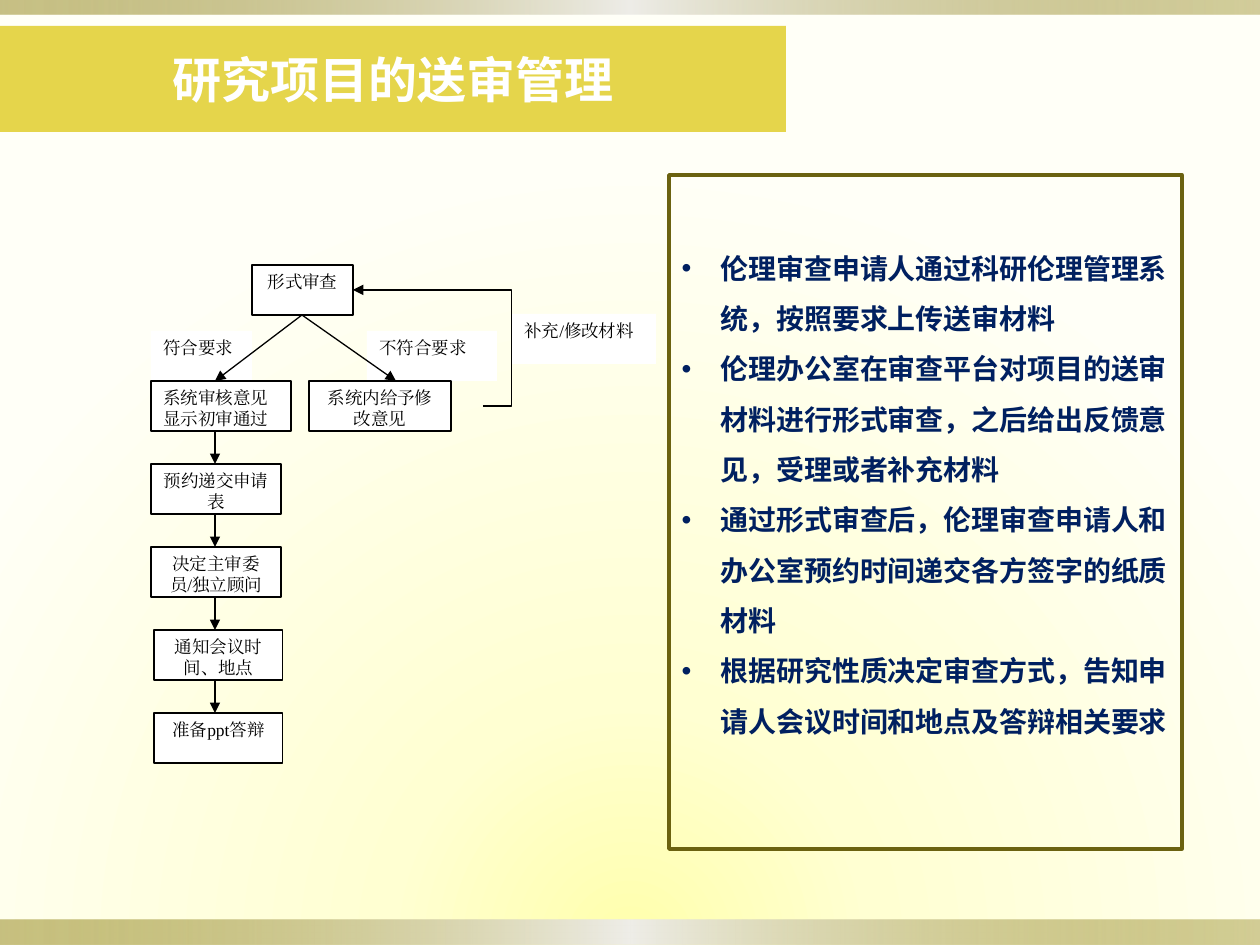
from lxml.etree import SubElement
from pptx import Presentation
from pptx.dml.color import RGBColor
from pptx.enum.shapes import MSO_CONNECTOR as CONN, MSO_SHAPE as SHAPE
from pptx.enum.text import MSO_ANCHOR as ANCHOR, MSO_AUTO_SIZE as AUTO, PP_ALIGN as ALIGN
from pptx.oxml import parse_xml
from pptx.oxml.ns import nsdecls, qn
from pptx.util import Emu, Pt

SCALE = 914400 / 126
WHITE = RGBColor(0xFF, 0xFF, 0xFF)
BLACK = RGBColor(0, 0, 0)
YELLOW = RGBColor(0xE5, 0xD5, 0x4B)
OLIVE = RGBColor(0x6B, 0x62, 0x10)
NAVY = RGBColor(0x00, 0x20, 0x60)
BAND = RGBColor(0x91, 0x84, 0x15)
SILVER = RGBColor(0xEE, 0xED, 0xE8)
GLOW = RGBColor(0xFF, 0xFF, 0xAC)
CREAM = RGBColor(0xFF, 0xFF, 0xD2)
IVORY = RGBColor(0xFF, 0xFF, 0xF7)
HEAD_FONT, FLOW_FONT = "Cabin", "Times New Roman"

TITLE = "研究项目的送审管理"
POINTS = [
    "伦理审查申请人通过科研伦理管理系统，按照要求上传送审材料",
    "伦理办公室在审查平台对项目的送审材料进行形式审查，之后给出反馈意见，受理或者补充材料",
    "通过形式审查后，伦理审查申请人和办公室预约时间递交各方签字的纸质材料",
    "根据研究性质决定审查方式，告知申请人会议时间和地点及答辩相关要求",
]
LABELS = [
    ("补充/修改材料", 361, 49, 144),
    ("不符合要求", 216, 66, 130),
    ("符合要求", 0, 66, 101),
]
STEPS = [
    ("预约递交申请表", 0, 130),
    ("决定主审委员/独立顾问", 0, 130),
    ("通知会议时间、地点", 3, 129),
    ("准备ppt答辩", 3, 129),
]
BOX_H, STEP, ROW_Y, ARROW_X = 50, 83, 116, 64


def px(n):
    return Emu(round(n * SCALE))


def place(sp, x, y, w, h):
    sp.left, sp.top, sp.width, sp.height = map(px, (x, y, w, h))


def set_gradient(fill, owner, stops, direction):
    fill.gradient()
    old = owner.find(".//" + qn("a:gradFill"))
    gs = "".join(
        f'<a:gs pos="{pos * 1000}"><a:srgbClr val="{color}">'
        f'<a:alpha val="{alpha * 1000}"/></a:srgbClr></a:gs>'
        for pos, color, alpha in stops)
    old.getparent().replace(old, parse_xml(
        f'<a:gradFill {nsdecls("a")} rotWithShape="1"><a:gsLst>{gs}</a:gsLst>{direction}</a:gradFill>'))


def add_run(p, text, size, font, color, bold=False):
    r = p.add_run()
    r.text = text
    f = r.font
    f.size, f.name, f.bold = Pt(size), font, bold
    f.color.rgb = color
    SubElement(r._r.get_or_add_rPr(), qn("a:ea")).set("typeface", font)


def add_rect(s, x, y, w, h):
    sp = s.shapes.add_shape(SHAPE.RECTANGLE, *map(px, (x, y, w, h)))
    sp.shadow.inherit = False
    sp.line.fill.background()
    return sp


def add_background(s):
    set_gradient(
        s.background.fill, s._element,
        [(0, GLOW, 100), (31, CREAM, 100), (100, IVORY, 100)],
        '<a:path path="circle"><a:fillToRect l="50000" t="150000" r="50000"/></a:path>')


def add_band(s, x, y, w, h):
    sp = add_rect(s, x, y, w, h)
    set_gradient(sp.fill, sp._element, [(0, BAND, 50), (50, SILVER, 100), (100, BAND, 40)],
                 '<a:lin ang="0" scaled="0"/>')


def add_title(s, x, y, w, h):
    sp = s.shapes.title
    place(sp, x, y, w, h)
    sp.fill.solid()
    sp.fill.fore_color.rgb = YELLOW
    tf = sp.text_frame
    tf.auto_size, tf.vertical_anchor = AUTO.NONE, ANCHOR.MIDDLE
    p = tf.paragraphs[0]
    p.alignment = ALIGN.CENTER
    add_run(p, TITLE, 28, HEAD_FONT, WHITE, True)


def add_points(s, x, y, w, h):
    sp = s.placeholders[1]
    place(sp, x, y, w, h)
    sp.line.color.rgb = OLIVE
    sp.line.width = Pt(2)
    tf = sp.text_frame
    tf.auto_size, tf.vertical_anchor = AUTO.NONE, ANCHOR.MIDDLE
    tf.margin_bottom = px(58)
    for i, text in enumerate(POINTS):
        p = tf.add_paragraph() if i else tf.paragraphs[0]
        p.line_spacing = 1.5
        p.space_before = Pt(0)
        pPr = p._p.get_or_add_pPr()
        pPr.set("marL", str(px(39)))
        pPr.set("indent", str(px(-39)))
        SubElement(pPr, qn("a:buFont")).set("typeface", "Arial")
        SubElement(pPr, qn("a:buChar")).set("char", "•")
        add_run(p, text, 16, HEAD_FONT, NAVY, True)


def add_node(s, text, x, y, w, align=ALIGN.CENTER, outlined=True):
    sp = add_rect(s, x, y, w, BOX_H)
    sp.fill.solid()
    sp.fill.fore_color.rgb = WHITE
    if outlined:
        sp.line.color.rgb = BLACK
        sp.line.width = Pt(0.75)
    tf = sp.text_frame
    tf.word_wrap, tf.vertical_anchor = True, ANCHOR.TOP
    p = tf.paragraphs[0]
    p.alignment = align
    add_run(p, text, 10, FLOW_FONT, BLACK)


def add_arrow(s, x1, y1, x2, y2, kind=CONN.STRAIGHT):
    c = s.shapes.add_connector(kind, *map(px, (x1, y1, x2, y2)))
    c.line.color.rgb = BLACK
    c.line.width = Pt(0.75)
    SubElement(c.line._get_or_add_ln(), qn("a:tailEnd")).set("type", "triangle")
    SubElement(c._element.spPr, qn("a:effectLst"))
    return c


def add_flow(s, x, y):
    for text, dx, dy, w in LABELS:
        add_node(s, text, x + dx, y + dy, w, ALIGN.LEFT, False)
    add_node(s, "形式审查", x + 101, y, 101)
    add_node(s, "系统审核意见显示初审通过", x, y + ROW_Y, 140, ALIGN.LEFT)
    add_node(s, "系统内给予修改意见", x + 158, y + ROW_Y, 142)

    back = add_arrow(s, x + 332, y + 141, x + 202, y + 25, CONN.ELBOW)
    guide = SubElement(back._element.spPr.prstGeom.get_or_add_avLst(), qn("a:gd"))
    guide.set("name", "adj1")
    guide.set("fmla", "val -22200")

    for i, (text, dx, w) in enumerate(STEPS, 1):
        top = y + ROW_Y + i * STEP
        add_node(s, text, x + dx, top, w)
        add_arrow(s, x + ARROW_X, top - STEP + BOX_H, x + ARROW_X, top)
    for dx in (ARROW_X, 245):
        add_arrow(s, x + 151, y + BOX_H, x + dx, y + ROW_Y)


def main():
    prs = Presentation()
    prs.slide_width, prs.slide_height = px(1260), px(945)
    s = prs.slides.add_slide(prs.slide_layouts[1])
    add_background(s)
    add_band(s, 0, 920, 1260, 25)
    add_band(s, 0, 0, 1260, 15)
    add_title(s, 0, 26, 786, 106)
    add_points(s, 669, 175, 513, 674)
    add_flow(s, 151, 265)
    prs.save("out.pptx")


if __name__ == "__main__":
    main()
